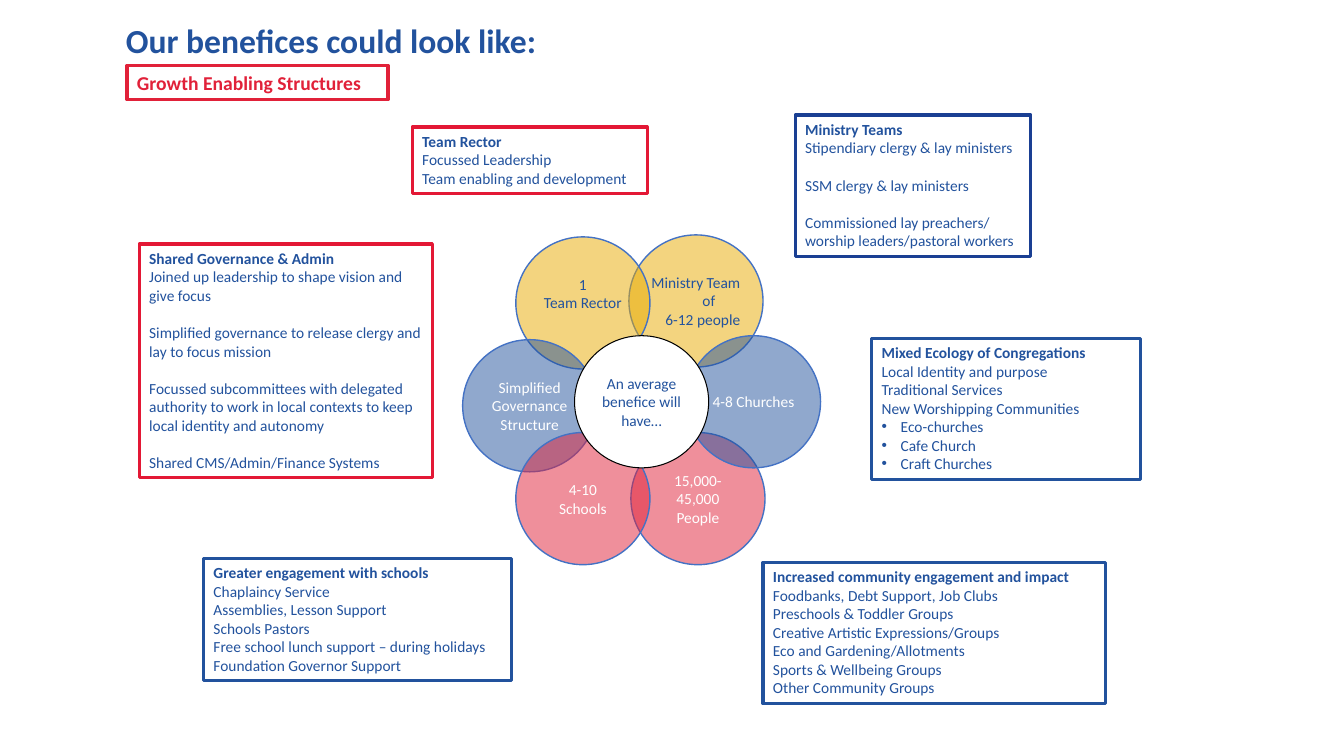
from lxml.etree import SubElement
from pptx import Presentation
from pptx.dml.color import RGBColor
from pptx.enum.shapes import MSO_SHAPE as Shape
from pptx.enum.text import MSO_ANCHOR as Anchor, PP_ALIGN as Align
from pptx.oxml.ns import qn
from pptx.util import Cm, Pt

BLUE = RGBColor(0x22, 0x52, 0x9D)
NAVY = RGBColor(0x1A, 0x3F, 0x93)
RED = RGBColor(0xE1, 0x21, 0x39)
SCARLET = RGBColor(0xE3, 0x18, 0x35)
GOLD = RGBColor(0xE9, 0xAB, 0x01)
OUTLINE = RGBColor(0x44, 0x72, 0xC4)
WHITE = RGBColor(0xFF, 0xFF, 0xFF)
BLACK = RGBColor(0, 0, 0)

TITLE = "Our benefices could look like:"
TAGLINE = "Growth Enabling Structures"
FONT = "Calibri"
BODY_SIZE = 11
LINE_GAP = Pt(13.4)
DIAMETER = Cm(3.38), Cm(3.33)
BULLET_INDENT = Cm(0.48)

PETALS = [
    (15.85, 5.92, GOLD, BLUE, 0, 0.47,
     [("Ministry Team", 0), ("of", 0.65), ("6-12 people", 0.35)]),
    (15.9, 10.9, RED, WHITE, 0.25, None, [("15,000-45,000 People", 0)]),
    (17.3, 8.46, BLUE, WHITE, 0, None, [("4-8 Churches", 0)]),
    (13, 5.97, GOLD, BLUE, 0, 0.47, [("1", 0), ("Team Rector", 0)]),
    (11.66, 8.56, BLUE, WHITE, 0, None, [("Simplified Governance Structure", 0)]),
    (13, 10.9, RED, WHITE, 0.25, None, [("4-10 Schools", 0)]),
]
CENTRE = (14.48, 8.46, WHITE, BLUE, 0.1, None, [("An average benefice will have…", 0)])

BOXES = [
    (20.04, 2.9, 5.94, 3.56, NAVY, True, "Ministry Teams",
     ["Stipendiary clergy & lay ministers", "SSM clergy & lay ministers",
      "Commissioned lay preachers/ worship leaders/pastoral workers"], []),
    (21.97, 8.53, 6.78, 3.56, BLUE, False, "Mixed Ecology of Congregations",
     ["Local Identity and purpose", "Traditional Services", "New Worshipping Communities"],
     ["Eco-churches", "Cafe Church", "Craft Churches"]),
    (5.13, 14.07, 7.77, 3.07, BLUE, False, "Greater engagement with schools",
     ["Chaplaincy Service", "Assemblies, Lesson Support", "Schools Pastors",
      "Free school lunch support – during holidays", "Foundation Governor Support"], []),
    (3.51, 6.15, 7.39, 5.89, SCARLET, True, "Shared Governance & Admin",
     ["Joined up leadership to shape vision and give focus",
      "Simplified governance to release clergy and lay to focus mission",
      "Focussed subcommittees with delegated authority to work in local contexts "
      "to keep local identity and autonomy",
      "Shared CMS/Admin/Finance Systems"], []),
    (10.39, 3.2, 5.92, 1.68, SCARLET, False, "Team Rector",
     ["Focussed Leadership", "Team enabling and development"], []),
    (19.23, 14.17, 8.64, 3.56, BLUE, False, "Increased community engagement and impact",
     ["Foodbanks, Debt Support, Job Clubs", "Preschools & Toddler Groups",
      "Creative Artistic Expressions/Groups", "Eco and Gardening/Allotments",
      "Sports & Wellbeing Groups", "Other Community Groups"], []),
]


def set_font(para, color, size=BODY_SIZE, bold=False):
    """Apply the slide's typeface to a paragraph."""
    para.font.name, para.font.size, para.font.bold = FONT, Pt(size), bold
    para.font.color.rgb = color


def add_para(frame, index):
    """Return the first paragraph of a frame, or a new one after it."""
    return frame.add_paragraph() if index else frame.paragraphs[0]


def add_circle(page, petal, border, weight, alpha=None):
    """Draw one circle with its centred caption."""
    left, top, fill, color, side, head, lines = petal
    circle = page.shapes.add_shape(Shape.OVAL, Cm(left), Cm(top), *DIAMETER)
    circle.shadow.inherit = False
    circle.fill.solid()
    circle.fill.fore_color.rgb = fill
    circle.line.color.rgb, circle.line.width = border, Pt(weight)
    if alpha:
        tint = circle._element.spPr.find(qn("a:solidFill")).find(qn("a:srgbClr"))
        SubElement(tint, qn("a:alpha")).set("val", str(alpha * 1000))
    frame = circle.text_frame
    frame.word_wrap = True
    frame.margin_left = frame.margin_right = Cm(side)
    frame.margin_top, frame.margin_bottom = Cm(head or 0), 0
    frame.vertical_anchor = Anchor.TOP if head else Anchor.MIDDLE
    for index, (text, indent) in enumerate(lines):
        para = add_para(frame, index)
        para.text, para.alignment = text, Align.CENTER
        if indent:
            para._p.get_or_add_pPr().set("marL", str(Cm(indent)))
        set_font(para, color)


def add_frame(page, left, top, width, height, border):
    """Draw an unfilled bordered rectangle and return its text frame."""
    box = page.shapes.add_shape(Shape.RECTANGLE, Cm(left), Cm(top), Cm(width), Cm(height))
    box.shadow.inherit = False
    box.fill.background()
    box.line.color.rgb, box.line.width = border, Pt(2.25)
    frame = box.text_frame
    frame.word_wrap, frame.vertical_anchor = True, Anchor.TOP
    return frame


def add_box(page, left, top, width, height, border, spaced, heading, lines, bullets):
    """Draw a bordered box with a heading, lines and bullets."""
    frame = add_frame(page, left, top, width, height, border)
    for index, text in enumerate([heading, *lines, *bullets]):
        para = add_para(frame, index)
        para.text, para.alignment = text, Align.LEFT
        if spaced and index > 1:
            para.space_before = LINE_GAP
        if index > len(lines):
            props = para._p.get_or_add_pPr()
            props.set("marL", str(BULLET_INDENT))
            props.set("indent", str(-BULLET_INDENT))
            SubElement(props, qn("a:buFont")).set("typeface", "Arial")
            SubElement(props, qn("a:buChar")).set("char", "•")
        set_font(para, BLUE, bold=index == 0)


def main():
    """Build the benefices slide and save it."""
    deck = Presentation()
    deck.slide_width, deck.slide_height = Cm(33.87), Cm(19.05)
    page = deck.slides.add_slide(deck.slide_layouts[5])

    title = page.shapes.title
    title.left, title.top, title.width, title.height = Cm(2.92), Cm(0.38), Cm(11.15), Cm(1.27)
    title.text_frame.text = TITLE
    title.text_frame.word_wrap = False
    title.text_frame.vertical_anchor = Anchor.TOP
    para = title.text_frame.paragraphs[0]
    para.alignment = Align.LEFT
    set_font(para, BLUE, 24, True)

    for petal in PETALS:
        add_circle(page, petal, OUTLINE, 1, 50)
    add_circle(page, CENTRE, BLACK, 0)
    for box in BOXES:
        add_box(page, *box)

    para = add_frame(page, 3.2, 1.65, 6.58, 0.86, RED).paragraphs[0]
    para.text, para.alignment = TAGLINE, Align.LEFT
    set_font(para, RED, 14, True)
    deck.save("out.pptx")


if __name__ == "__main__":
    main()
